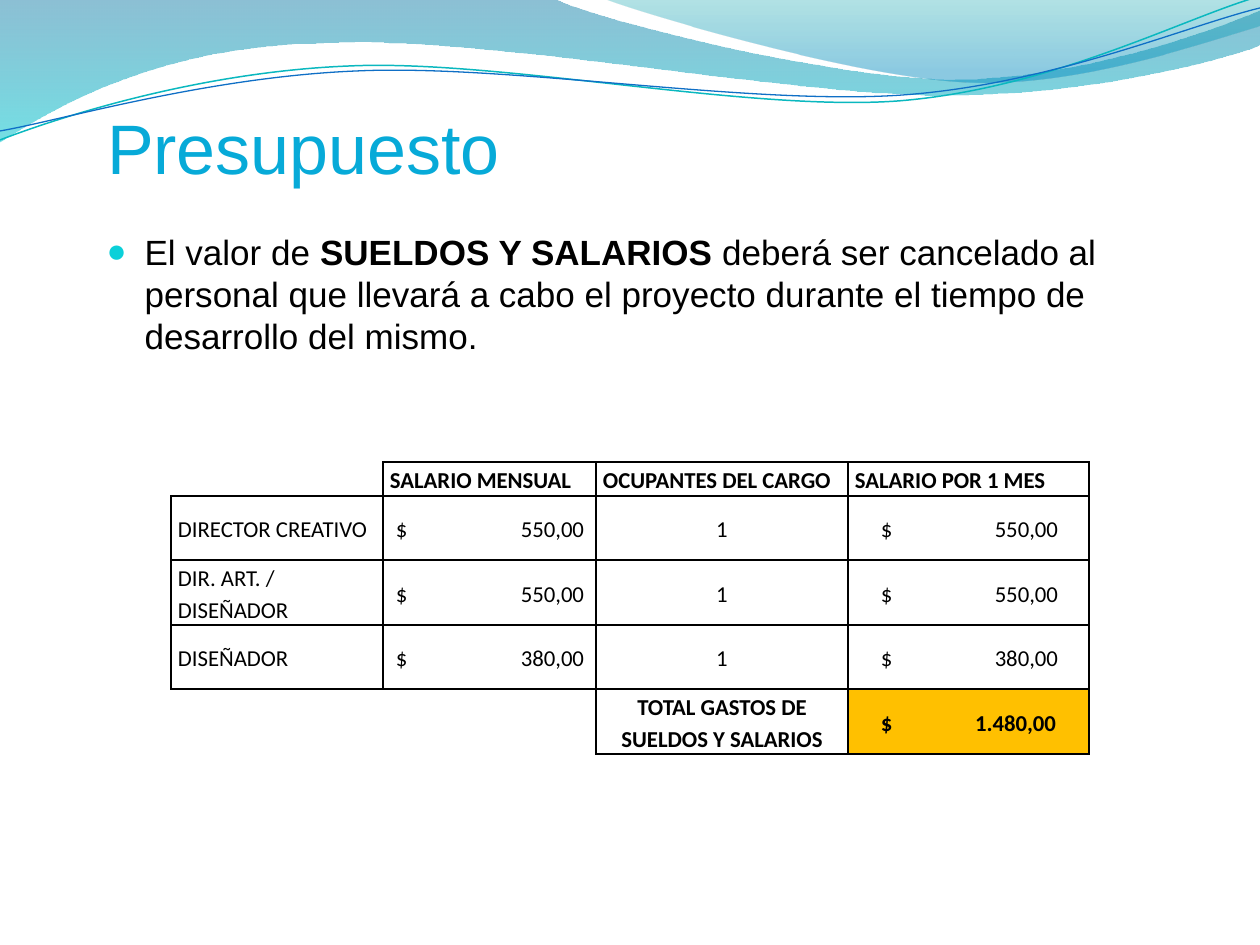
import math
from dataclasses import dataclass
from typing import Optional

from lxml import etree
from pptx import Presentation
from pptx import util as u
from pptx.dml.color import RGBColor
from pptx.enum import text as t
from pptx.oxml.ns import qn

PX = 914400 / 126  # EMU in one px
BLACK = RGBColor(0, 0, 0)
TITLE = RGBColor(0x07, 0xAA, 0xD8)
BULLET = RGBColor(0x0B, 0xD0, 0xD9)
GOLD = RGBColor(0xFF, 0xC0, 0x00)
BLUE = RGBColor(0x00, 0x74, 0xA1)
CYAN = RGBColor(0x00, 0xC6, 0xCF)
TEAL = RGBColor(0x00, 0xA1, 0xA9)
SKY = RGBColor(0x00, 0x8B, 0xBF)
AQUA = RGBColor(0x0A, 0xB8, 0xBF)
NAVY = RGBColor(0x0F, 0x6F, 0xC6)
LEFT, MID = t.PP_ALIGN.LEFT, t.PP_ALIGN.CENTER


@dataclass
class Wave:
    """Segments hold one end point, or two controls and an end point."""
    box: tuple
    start: tuple
    segs: list
    stops: tuple = ()  # (position, colour, alpha %)
    line: Optional[RGBColor] = None
    width: float = 0
    turn: float = 0  # degrees clockwise


@dataclass
class Cell:
    text: str = ""
    bold: bool = False
    align: int = LEFT
    edges: str = "LRTB"
    fill: Optional[RGBColor] = None
    pad: int = 7
    tab: int = 0  # right tab stop for an amount


def px(n: float) -> u.Emu:
    return u.Emu(round(n * PX))


def add(parent, tag: str, **attrs):
    return etree.SubElement(parent, qn(tag), {k: str(v) for k, v in attrs.items()})


def write(para, text: str, *, font: str = "Arial", size: float = 20,
          color: RGBColor = BLACK, bold: bool = False) -> None:
    run = para.add_run()
    run.text = text
    run.font.name, run.font.size, run.font.bold = font, u.Pt(size), bold
    run.font.color.rgb = color


def place(shape, x: int, y: int, w: int, h: int) -> None:
    shape.left, shape.top, shape.width, shape.height = map(px, (x, y, w, h))


def curve(shape, wave: Wave) -> None:
    """Give the outline true curves, stored as they lie before the turn."""
    x, y, w, h = wave.box
    cos, sin = (f(math.radians(-wave.turn)) for f in (math.cos, math.sin))
    path = next(shape._element.iter(qn("a:path")))
    path.clear()
    path.set("w", str(px(w)))
    path.set("h", str(px(h)))
    for seg in ((wave.start,), *wave.segs):
        tag = "a:moveTo" if len(path) == 0 else "a:lnTo"
        step = add(path, "a:cubicBezTo" if len(seg) == 3 else tag)
        for a, b in seg:
            a, b = a - x - w / 2, b - y - h / 2
            add(step, "a:pt", x=px(a * cos - b * sin + w / 2),
                y=px(a * sin + b * cos + h / 2))
    if wave.stops:
        add(path, "a:close")


def draw_wave(slide, wave: Wave) -> None:
    pen = slide.shapes.build_freeform(*wave.start, scale=PX)
    pen.add_line_segments([seg[-1] for seg in wave.segs], close=False)
    shape = pen.convert_to_shape()
    curve(shape, wave)
    place(shape, *wave.box)
    shape.rotation = wave.turn
    shape.shadow.inherit = False
    if wave.line is not None:
        shape.fill.background()
        shape.line.color.rgb = wave.line
        shape.line.width = u.Pt(wave.width)
        return
    shape.fill.gradient()
    shape.fill.gradient_angle = 270
    for stop, (pos, color, _) in zip(shape.fill.gradient_stops, wave.stops):
        stop.position, stop.color.rgb = pos, color
    tints = shape._element.spPr.iter(qn("a:srgbClr"))
    for tint, (_, _, alpha) in zip(list(tints), wave.stops):
        add(tint, "a:alpha", val=alpha * 1000)
    shape.line.fill.background()


def draw_cell(cell, data: Cell) -> None:
    cell.margin_left, cell.margin_right = px(data.pad), px(7)
    cell.margin_top = cell.margin_bottom = 0
    cell.vertical_anchor = t.MSO_ANCHOR.MIDDLE
    props = cell._tc.get_or_add_tcPr()
    for side in "LRTB":
        edge = add(props, f"a:ln{side}", w=u.Pt(1))
        if side in data.edges:
            add(add(edge, "a:solidFill"), "a:srgbClr", val=BLACK)
        else:
            add(edge, "a:noFill")
    if data.fill is None:
        cell.fill.background()
    else:
        cell.fill.solid()
        cell.fill.fore_color.rgb = data.fill

    para = cell.text_frame.paragraphs[0]
    if not data.text:
        add(para._p, "a:endParaRPr", sz=1300)
        return
    para.alignment, para.line_spacing, para.space_after = data.align, 1.15, u.Pt(6)
    if data.tab:
        tabs = add(para._p.get_or_add_pPr(), "a:tabLst")
        add(tabs, "a:tab", pos=px(data.tab), algn="r")
    write(para, data.text, font="Calibri", size=13, bold=data.bold)


def draw_table(slide, x: int, y: int, cols: list, rows: list, grid: list) -> None:
    table = slide.shapes.add_table(len(rows), len(cols), px(x), px(y),
                                   px(sum(cols)), px(sum(rows))).table
    table.first_row = table.horz_banding = False
    for col, w in zip(table.columns, cols):
        col.width = px(w)
    for row, h, line in zip(table.rows, rows, grid):
        row.height = px(h)
        for cell, data in zip(row.cells, line):
            draw_cell(cell, data)


def salary(role: str, pay: str) -> list:
    money = f"$\t{pay}"
    return [Cell(role), Cell(money, pad=13, tab=188), Cell("1", align=MID),
            Cell(money, pad=33, tab=177)]


WAVES = [
    Wave((-1, -1, 1262, 143), (0, 0),
         [((554, -1),), ((600, 21), (837, 79), (955, 79)),
          ((1075, 79), (1207, 33), (1260, 11)), ((1261, 45),),
          ((1239, 55), (1096, 96), (940, 95)), ((784, 95), (481, 35), (324, 43)),
          ((163, 45), (58, 105), (-1, 142)), ((0, 0),)],
         stops=((0, BLUE, 45), (1, CYAN, 55))),
    Wave((604, -1, 656, 88), (604, -1),
         [((641, 14), (859, 78), (969, 82)), ((1079, 87), (1211, 40), (1260, 26)),
          ((1260, 0),), ((604, -1),)],
         stops=((0, TEAL, 30), (0.8, SKY, 45))),
    Wave((-2, 28, 1262, 89), (0, 140),
         [((60, 117), (199, 72), (349, 66)), ((498, 59), (747, 112), (898, 101)),
          ((1050, 89), (1182, 19), (1257, -3))], line=AQUA, width=0.85, turn=-2.7),
    Wave((-2, 38, 1264, 73), (0, 131),
         [((59, 121), (207, 77), (357, 71)), ((508, 64), (752, 106), (903, 95)),
          ((1053, 84), (1186, 26), (1260, 8))], line=NAVY, width=0.75, turn=-2.7),
]
HEADS = ("SALARIO MENSUAL", "OCUPANTES DEL CARGO", "SALARIO POR 1 MES")
GRID = [
    [Cell(edges="RB"), *(Cell(head, bold=True) for head in HEADS)],
    salary("DIRECTOR CREATIVO", "550,00"),
    salary("DIR. ART. / DISEÑADOR", "550,00"),
    salary("DISEÑADOR", "380,00"),
    [Cell(edges="T"), Cell(edges="TR"),
     Cell("TOTAL GASTOS DE SUELDOS Y SALARIOS", bold=True, align=MID),
     Cell("$\t1.480,00", bold=True, fill=GOLD, pad=33, tab=175)],
]


def main() -> None:
    deck = Presentation()
    deck.slide_width, deck.slide_height = px(1260), px(945)
    slide = deck.slides.add_slide(deck.slide_layouts[1])
    title, body = slide.placeholders
    # Waves, kept behind the text
    for wave in WAVES:
        draw_wave(slide, wave)
    for holder in (title, body):
        slide.shapes._spTree.append(holder._element)
    # Title
    place(title, 107, 86, 1050, 103)
    frame = title.text_frame
    frame.auto_size, frame.vertical_anchor = t.MSO_AUTO_SIZE.NONE, t.MSO_ANCHOR.BOTTOM
    frame.margin_left = frame.margin_right = frame.margin_bottom = 0
    para = frame.paragraphs[0]
    para.alignment = LEFT
    write(para, "Presupuesto", size=40, color=TITLE)
    # Bulleted text
    place(body, 94, 224, 1111, 169)
    body.text_frame.auto_size = t.MSO_AUTO_SIZE.NONE
    para = body.text_frame.paragraphs[0]
    props = para._p.get_or_add_pPr()
    props.set("marL", str(px(38)))
    props.set("indent", str(px(-38)))
    add(add(props, "a:buClr"), "a:srgbClr", val=BULLET)
    add(props, "a:buSzPct", val=95000)
    add(props, "a:buChar", char="●")
    write(para, "El valor de ")
    write(para, "SUELDOS Y SALARIOS ", bold=True)
    write(para, "deberá ser cancelado al personal que llevará a cabo el proyecto "
                "durante el tiempo de desarrollo del mismo.")
    # Salary table
    draw_table(slide, 171, 462, [212, 213, 252, 241], [34, 64, 65, 64, 65], GRID)
    deck.save("out.pptx")


if __name__ == "__main__":
    main()
